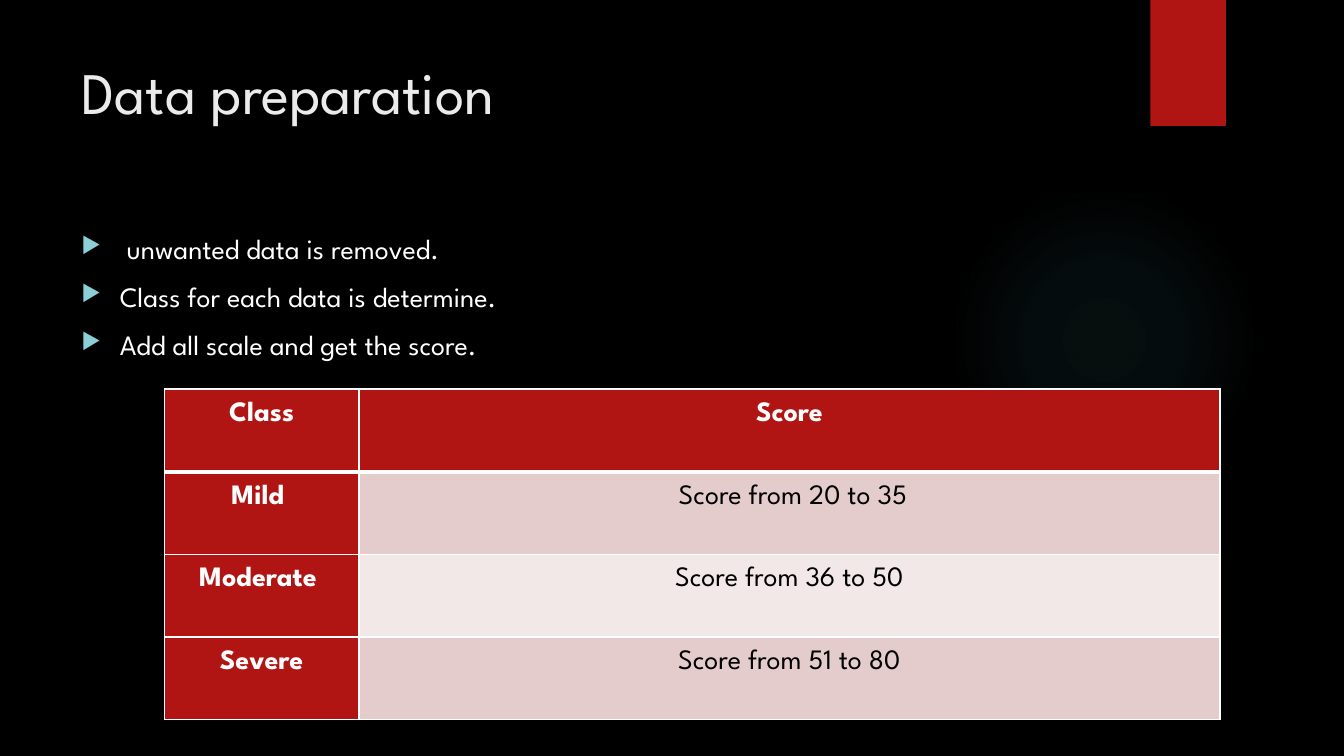
from dataclasses import dataclass

from lxml import etree
from pptx import Presentation
from pptx import util as u
from pptx.dml.color import RGBColor
from pptx.enum import shapes, text
from pptx.oxml import ns

FONT = "League Spartan"
COLORS = {
    "background": "000000",
    "title": "EBEBEB",
    "white": "FFFFFF",
    "black": "000000",
    "red": "B01513",
    "bullet": "8AD0D6",
    "glow": "50B9C1",
    "band_dark": "E4CCCC",
    "band_light": "F2E8E7",
}
BULLETS = [
    " unwanted data is removed.",
    "Class for each data is determine.",
    "Add all scale and get the score.",
]
GLOW_STOPS = [(0, 7), (36, 6), (69, 0)]  # position and opacity, in percent


@dataclass
class ScoreRow:
    label: str
    score: str


ROWS = [
    ScoreRow("Class", "Score"),
    ScoreRow("Mild ", " Score from 20 to 35"),
    ScoreRow("Moderate ", "Score from 36 to 50"),
    ScoreRow("Severe", "Score from 51 to 80"),
]


def rgb(name: str) -> RGBColor:
    return RGBColor.from_string(COLORS[name])


def box(left: float, top: float, width: float, height: float) -> list:
    return [u.Inches(v) for v in (left, top, width, height)]


def add_xml(parent, tag: str, **attrs):
    child = etree.SubElement(parent, ns.qn(tag))
    for name, value in attrs.items():
        child.set(name, str(value))
    return child


def add_color(parent, name: str, opacity: int = 100) -> None:
    color = add_xml(parent, "a:srgbClr", val=COLORS[name])
    if opacity < 100:
        add_xml(color, "a:alpha", val=opacity * 1000)


def add_run(p, words: str, size: float, color: str, bold: bool = False) -> None:
    r = p.add_run()
    r.text = words
    r.font.name = FONT
    r.font.size = u.Pt(size)
    r.font.bold = bold
    r.font.color.rgb = rgb(color)


def add_glow(s) -> None:
    sp = s.shapes.add_shape(shapes.MSO_SHAPE.OVAL, *box(9.41, 1.83, 3.08, 3.08))
    sp.shadow.inherit = False
    sp.line.fill.background()
    sp.fill.gradient()
    grad = sp.element.spPr.find(ns.qn("a:gradFill"))
    for child in list(grad):
        grad.remove(child)
    stops = add_xml(grad, "a:gsLst")
    for position, opacity in GLOW_STOPS:
        add_color(add_xml(stops, "a:gs", pos=position * 1000), "glow", opacity)
    center = add_xml(grad, "a:path", path="circle")
    add_xml(center, "a:fillToRect", l=50000, t=50000, r=50000, b=50000)


def add_ribbon(s) -> None:
    sp = s.shapes.add_shape(shapes.MSO_SHAPE.RECTANGLE, *box(11.41, 0, 0.75, 1.25))
    sp.shadow.inherit = False
    sp.fill.solid()
    sp.fill.fore_color.rgb = rgb("red")
    sp.line.fill.background()
    effects = sp.element.spPr.find(ns.qn("a:effectLst"))
    shadow = add_xml(effects, "a:outerShdw", blurRad=u.Pt(3), dist=u.Pt(2),
                     dir=90 * 60000, rotWithShape=0)
    add_color(shadow, "black", 45)


def add_title(s) -> None:
    title = s.shapes.title
    title.left, title.top, title.width, title.height = box(0.71, 0.5, 10.29, 1.53)
    tf = title.text_frame
    tf.vertical_anchor = text.MSO_ANCHOR.TOP
    tf.auto_size = text.MSO_AUTO_SIZE.NONE
    p = tf.paragraphs[0]
    p.alignment = text.PP_ALIGN.LEFT
    add_run(p, "Data preparation", 42, "title")


def add_bullets(s) -> None:
    tf = s.shapes.add_textbox(*box(0.71, 2.25, 10.29, 4.59)).text_frame
    tf.word_wrap = True
    for i, words in enumerate(BULLETS):
        p = tf.add_paragraph() if i else tf.paragraphs[0]
        p.space_before = u.Pt(10 if i else 0)
        pPr = p._p.get_or_add_pPr()
        pPr.set("marL", str(u.Inches(0.38)))
        pPr.set("indent", str(u.Inches(-0.38)))
        add_color(add_xml(pPr, "a:buClr"), "bullet")
        add_xml(pPr, "a:buSzPct", val=80000)
        add_xml(pPr, "a:buChar", char="▶")
        add_run(p, words, 20, "white")


def set_borders(cell, top: float, bottom: float) -> None:
    tcPr = cell._tc.get_or_add_tcPr()
    for side, width in zip("LRTB", (1, 1, top, bottom)):
        line = add_xml(tcPr, f"a:ln{side}", w=u.Pt(width))
        add_color(add_xml(line, "a:solidFill"), "white")


def add_score_table(s) -> None:
    table = s.shapes.add_table(len(ROWS), 2, *box(1.63, 3.86, 10.47, 3.27)).table
    for column, width in zip(table.columns, (1.93, 8.54)):
        column.width = u.Inches(width)
    for i, row in enumerate(ROWS):
        table.rows[i].height = u.Inches(0.82)
        for j, words in enumerate((row.label, row.score)):
            heading = i == 0 or j == 0
            band = "band_dark" if i % 2 else "band_light"
            cell = table.cell(i, j)
            set_borders(cell, top=3 if i == 1 else 1, bottom=3 if i == 0 else 1)
            cell.fill.solid()
            cell.fill.fore_color.rgb = rgb("red" if heading else band)
            cell.margin_left = cell.margin_right = u.Inches(0.07)
            cell.margin_top = cell.margin_bottom = 0
            p = cell.text_frame.paragraphs[0]
            p.alignment = text.PP_ALIGN.CENTER
            p.line_spacing = 1.5
            add_run(p, words, 20, "white" if heading else "black", heading)


def main() -> None:
    prs = Presentation()
    prs.slide_width, prs.slide_height = u.Inches(13.33), u.Inches(7.5)
    s = prs.slides.add_slide(prs.slide_layouts[5])
    s.background.fill.solid()
    s.background.fill.fore_color.rgb = rgb("background")
    add_glow(s)
    add_ribbon(s)
    add_title(s)
    add_bullets(s)
    add_score_table(s)
    prs.save("out.pptx")


if __name__ == "__main__":
    main()
